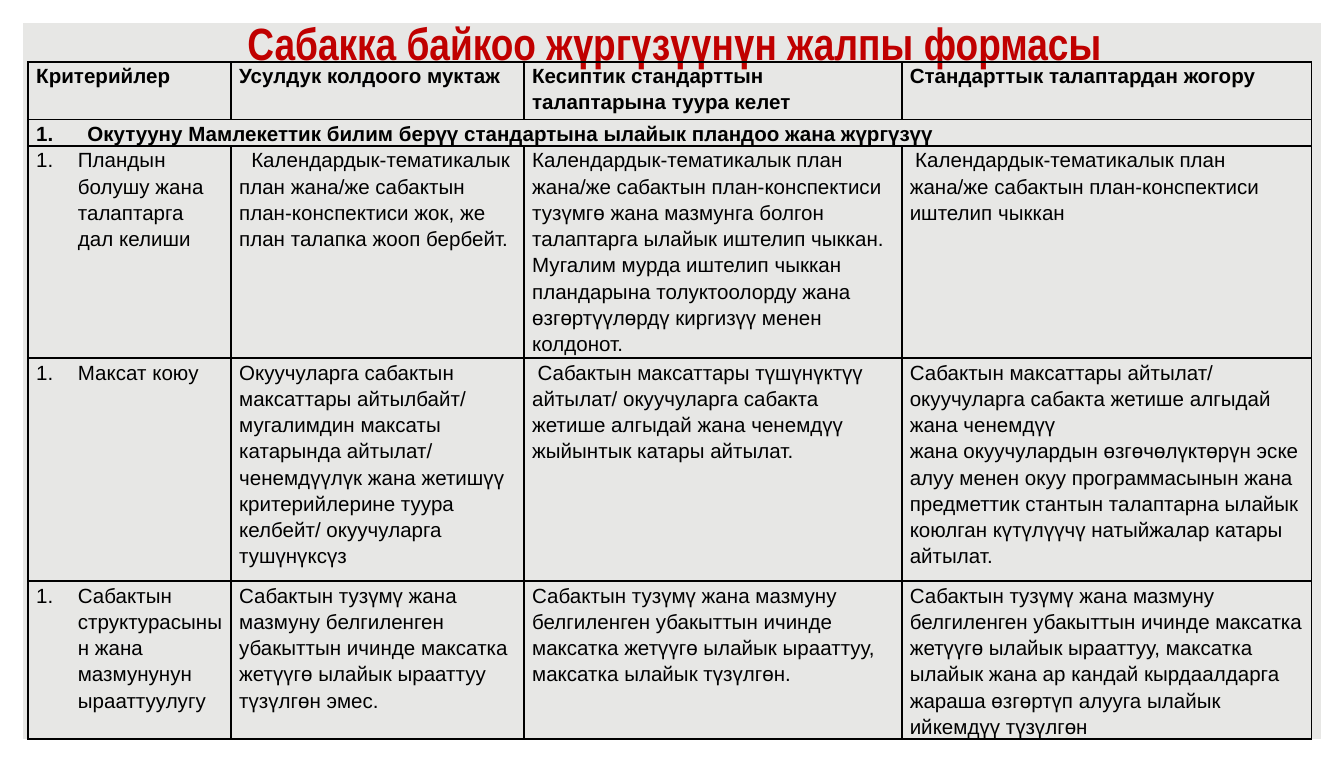
from lxml.etree import SubElement
from pptx import Presentation
from pptx.dml.color import RGBColor
from pptx.enum.shapes import MSO_SHAPE as Shape
from pptx.enum.text import MSO_ANCHOR as Anchor, PP_ALIGN as Align
from pptx.oxml.ns import qn
from pptx.util import Inches, Pt

COLORS = {"back": "E7E7E5", "frame": "FFFFFF", "title": "C00000", "text": "000000"}
COLUMNS = [1.51, 2.18, 2.81, 3.05]
ROWS = [0.43, 0.19, 1.58, 1.66, 1.17]
LESSON = "Сабактын тузүмү жана мазмуну белгиленген убакыттын ичинде максатка жетүүгө ылайык ырааттуу"
CELLS = [
    ["Критерийлер", "Усулдук колдоого муктаж",
     "Кесиптик стандарттын талаптарына туура келет", "Стандарттык талаптардан жогору"],
    ["Окутууну Мамлекеттик билим берүү стандартына ылайык пландоо жана жүргүзүү"],
    ["Пландын болушу жана талаптарга дал келиши",
     "Календардык-тематикалык план жана/же сабактын план-конспектиси жок, же план талапка жооп бербейт.",
     "Календардык-тематикалык план жана/же сабактын план-конспектиси тузүмгө жана мазмунга болгон "
     "талаптарга ылайык иштелип чыккан. Мугалим мурда иштелип чыккан пландарына толуктоолорду жана "
     "өзгөртүүлөрдү киргизүү менен колдонот.",
     "Календардык-тематикалык план жана/же сабактын план-конспектиси иштелип чыккан"],
    ["Максат коюу",
     "Окуучуларга сабактын максаттары айтылбайт/ мугалимдин максаты катарында айтылат/ ченемдүүлүк "
     "жана жетишүү критерийлерине туура келбейт/ окуучуларга тушүнүксүз",
     "Сабактын максаттары түшүнүктүү айтылат/ окуучуларга сабакта жетише алгыдай жана ченемдүү "
     "жыйынтык катары айтылат.",
     "Сабактын максаттары айтылат/ окуучуларга сабакта жетише алгыдай жана ченемдүү\n"
     "жана окуучулардын өзгөчөлүктөрүн эске алуу менен окуу программасынын жана предметтик стантын "
     "талаптарна ылайык коюлган күтүлүүчү натыйжалар катары айтылат."],
    ["Сабактын структурасынын жана мазмунунун ырааттуулугу",
     f"{LESSON} түзүлгөн эмес.",
     f"{LESSON}, максатка ылайык түзүлгөн.",
     f"{LESSON}, максатка ылайык жана ар кандай кырдаалдарга жараша өзгөртүп алууга ылайык "
     "ийкемдүү түзүлгөн"],
]
FIRST_LINE = {(2, 1): 0.09, (2, 3): 0.04, (3, 2): 0.04}


def set_font(para, name, size, color, bold):
    para.font.name = name
    para.font.size = Pt(size)
    para.font.bold = bold
    para.font.color.rgb = RGBColor.from_string(COLORS[color])


def add_borders(cell):
    properties = cell._tc.get_or_add_tcPr()
    for side in "LRTB":
        line = SubElement(properties, qn(f"a:ln{side}"), w=str(Pt(1)))
        fill = SubElement(line, qn("a:solidFill"))
        SubElement(fill, qn("a:srgbClr"), val=COLORS["text"])


deck = Presentation()
deck.slide_width, deck.slide_height = Inches(10), Inches(5.67)
page = deck.slides.add_slide(deck.slide_layouts[5])
page.background.fill.solid()
page.background.fill.fore_color.rgb = RGBColor.from_string(COLORS["back"])

frame = page.shapes.add_shape(Shape.FRAME, 0, 0, Inches(10), Inches(5.67))
frame.adjustments[0] = 0.03
frame.shadow.inherit = False
frame.fill.solid()
frame.fill.fore_color.rgb = RGBColor.from_string(COLORS["frame"])
frame.line.fill.background()

title = page.shapes.title
title.left, title.top = Inches(1.74), Inches(0)
title.width, title.height = Inches(7.36), Inches(0.57)
title.text_frame.text = "Сабакка байкоо жүргүзүүнүн жалпы формасы"
title.text_frame.vertical_anchor = Anchor.BOTTOM
heading = title.text_frame.paragraphs[0]
heading.alignment = Align.LEFT
set_font(heading, "Arial Narrow", 24.2, "title", True)

table = page.shapes.add_table(
    len(ROWS), len(COLUMNS), Inches(0.21), Inches(0.46), Inches(sum(COLUMNS)), Inches(sum(ROWS))
).table
table.first_row = table.horz_banding = False
for column, width in zip(table.columns, COLUMNS):
    column.width = Inches(width)
for row, height in zip(table.rows, ROWS):
    row.height = Inches(height)
table.cell(1, 0).merge(table.cell(1, 3))

for r in range(len(ROWS)):
    for c in range(len(COLUMNS)):
        cell = table.cell(r, c)
        add_borders(cell)
        cell.fill.background()
        cell.margin_left = cell.margin_right = Inches(0.06)
        cell.margin_top = cell.margin_bottom = 0
        if c < len(CELLS[r]):
            cell.text = CELLS[r][c]
        for para in cell.text_frame.paragraphs:
            para.line_spacing = 1.15
            properties = para._p.get_or_add_pPr()
            if r > 0 and c == 0:
                indent = Inches(0.38 if r == 1 else 0.31)
                properties.set("marL", str(indent))
                properties.set("indent", str(-indent))
                SubElement(properties, qn("a:buFont"), typeface="+mj-lt")
                SubElement(properties, qn("a:buAutoNum"), type="arabicPeriod")
            elif (r, c) in FIRST_LINE:
                properties.set("indent", str(Inches(FIRST_LINE[r, c])))
            set_font(para, "Arial", 11, "text", r < 2)

deck.save("out.pptx")
